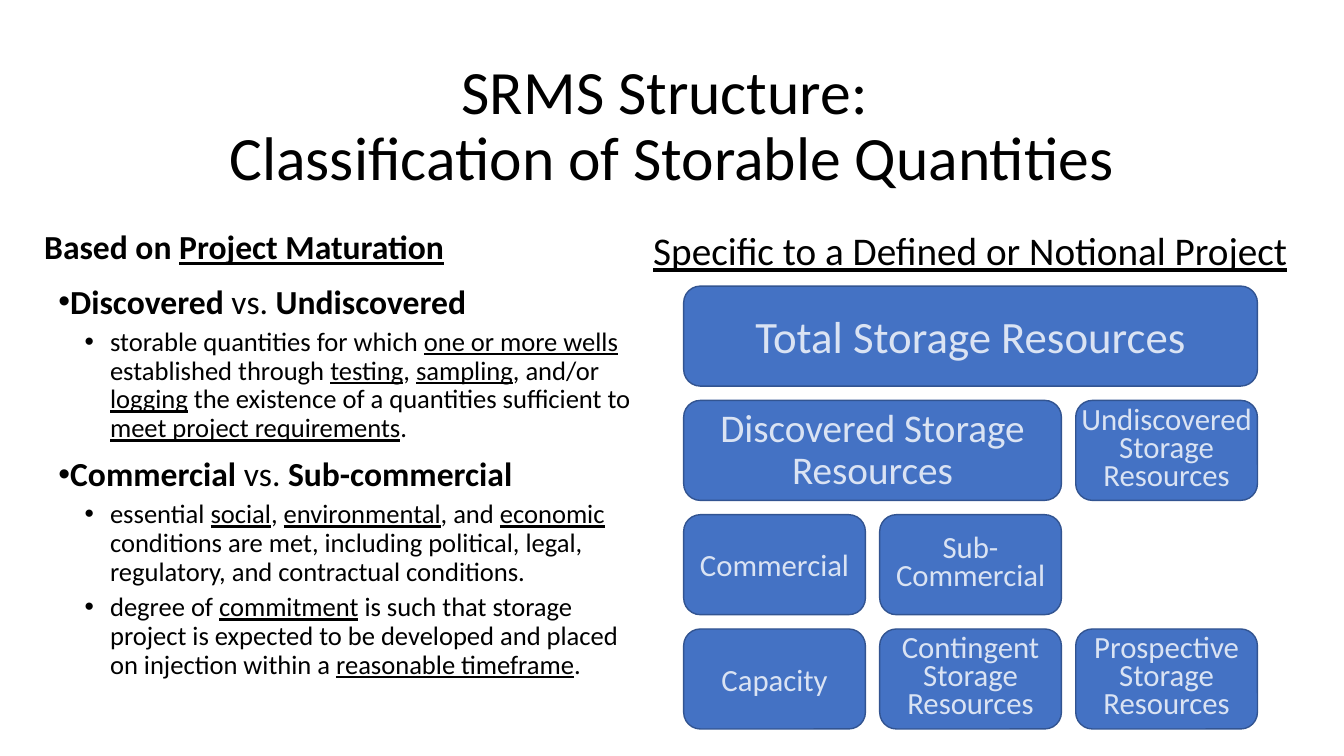
import pptx
import pptx.util
import pptx.dml.color
import pptx.enum.shapes
import pptx.enum.text
import pptx.oxml.ns
import lxml.etree

Cm, Pt = pptx.util.Cm, pptx.util.Pt
RGBColor = pptx.dml.color.RGBColor
ALIGN, ANCHOR = pptx.enum.text.PP_ALIGN, pptx.enum.text.MSO_ANCHOR

FACE = "Calibri"
BLACK = RGBColor(0x00, 0x00, 0x00)
BLUE = RGBColor(0x44, 0x72, 0xC4)
NAVY = RGBColor(0x32, 0x54, 0x91)
PALE = RGBColor(0xDA, 0xE3, 0xF3)

# (level, text): stars mark bold, underscores mark underline
POINTS = [
    (0, "*Discovered* vs. *Undiscovered*"),
    (1, "storable quantities for which _one or more wells _established through "
        "_testing_, _sampling_, and/or _logging_ the existence of a quantities "
        "sufficient to _meet project requirements_."),
    (0, "*Commercial* vs. *Sub-commercial*"),
    (1, "essential _social_, _environmental_, and _economic_ conditions are met, "
        "including political, legal, regulatory, and contractual conditions."),
    (1, "degree of _commitment_ is such that storage project is expected to be "
        "developed and placed on injection within a _reasonable timeframe_."),
]
# (row, column, columns spanned, text, size, line spacing)
TILES = [
    (0, 0, 3, "Total Storage Resources", 32, 1.0),
    (1, 0, 2, "Discovered Storage Resources", 28, Pt(30)),
    (1, 2, 1, "Undiscovered Storage Resources", 22, Pt(20)),
    (2, 0, 1, "Commercial", 22, 1.0),
    (2, 1, 1, "Sub-Commercial", 22, Pt(20)),
    (3, 0, 1, "Capacity", 22, 1.0),
    (3, 1, 1, "Contingent Storage Resources", 22, Pt(20)),
    (3, 2, 1, "Prospective Storage Resources", 22, Pt(20)),
]


def place(shape, box):
    shape.left, shape.top, shape.width, shape.height = map(Cm, box)


def style(para, size, color=BLACK, bold=False, space=0.9, before=0):
    para.line_spacing = space
    para.space_before = Pt(before)
    font = para.font
    font.name, font.size, font.bold = FACE, Pt(size), bold
    font.color.rgb = color


def write(para, text, mark="_"):
    """Add runs, with the pieces between marks underlined or bold."""
    for i, piece in enumerate(text.split(mark)):
        if piece:
            run = para.add_run()
            run.text = piece
            if i % 2 and mark == "*":
                run.font.bold = True
            elif i % 2:
                run.font.underline = True


def bullet(para, left, hang):
    props = para._p.get_or_add_pPr()
    props.set("marL", str(Cm(left)))
    props.set("indent", str(-Cm(hang)))
    for tag, key, value in (("a:buFont", "typeface", "Arial"),
                            ("a:buChar", "char", "•")):
        item = lxml.etree.SubElement(props, pptx.oxml.ns.qn(tag))
        item.set(key, value)


def frame(shape, anchor):
    text = shape.text_frame
    text.word_wrap = True
    text.auto_size = pptx.enum.text.MSO_AUTO_SIZE.NONE
    text.vertical_anchor = anchor
    return text


def title(shape, box):
    place(shape, box)
    para = frame(shape, ANCHOR.MIDDLE).paragraphs[0]
    para.text = "SRMS Structure: \vClassification of Storable Quantities"
    para.alignment = ALIGN.CENTER
    style(para, 44)


def points(head, body, box):
    """Place the heading and, below it, the bulleted list."""
    left, top, width, height = box
    place(head, (left, top, 11.56, 1.78))
    para = frame(head, ANCHOR.BOTTOM).paragraphs[0]
    style(para, 24, bold=True)
    write(para, "Based on _Project Maturation_")

    place(body, (left + 0.36, top + 1.98, width - 0.36, height - 1.98))
    text = frame(body, ANCHOR.TOP)
    for i, (level, words) in enumerate(POINTS):
        para = text.add_paragraph() if i else text.paragraphs[0]
        para.level = level
        bullet(para, 1.3 * level, 0.64)
        before = 0 if i == 0 else 5 if level else 10
        style(para, 19 if level else 24, before=before)
        write(para, words, "_" if level else "*")


def chart(slide, box):
    """Place the caption and the grid of resource classes."""
    left, top, width, height = box
    label = slide.shapes.add_textbox(*map(Cm, (left - 1.33, top, 17.1, 1.45)))
    para = frame(label, ANCHOR.TOP).paragraphs[0]
    para.alignment = ALIGN.CENTER
    style(para, 28, space=1.0)
    write(para, "_Specific to a Defined or Notional Project_")

    head, gap = 1.62, 0.36
    step = (width + gap) / 3
    drop = (height - head + gap) / 4
    for row, col, span, words, size, space in TILES:
        tile = slide.shapes.add_shape(
            pptx.enum.shapes.MSO_SHAPE.ROUNDED_RECTANGLE,
            Cm(left + col * step), Cm(top + head + row * drop),
            Cm(span * step - gap), Cm(drop - gap))
        tile.shadow.inherit = False
        tile.fill.solid()
        tile.fill.fore_color.rgb = BLUE
        tile.line.color.rgb = NAVY
        tile.line.width = Pt(1)
        text = frame(tile, ANCHOR.MIDDLE)
        text.margin_left = text.margin_right = 0
        para = text.paragraphs[0]
        para.text = words
        para.alignment = ALIGN.CENTER
        style(para, size, PALE, space=space)


def main():
    deck = pptx.Presentation()
    deck.slide_width, deck.slide_height = Cm(33.87), Cm(19.05)
    slide = deck.slides.add_slide(deck.slide_layouts.get_by_name("Comparison"))
    name, head, body, *spare = slide.placeholders
    for item in spare:
        item.element.getparent().remove(item.element)
    title(name, (0, 1.37, 33.87, 3.68))
    points(head, body, (0.86, 5.08, 15.55, 13.89))
    chart(slide, (17.23, 5.59, 14.46, 12.78))
    deck.save("out.pptx")


if __name__ == "__main__":
    main()
